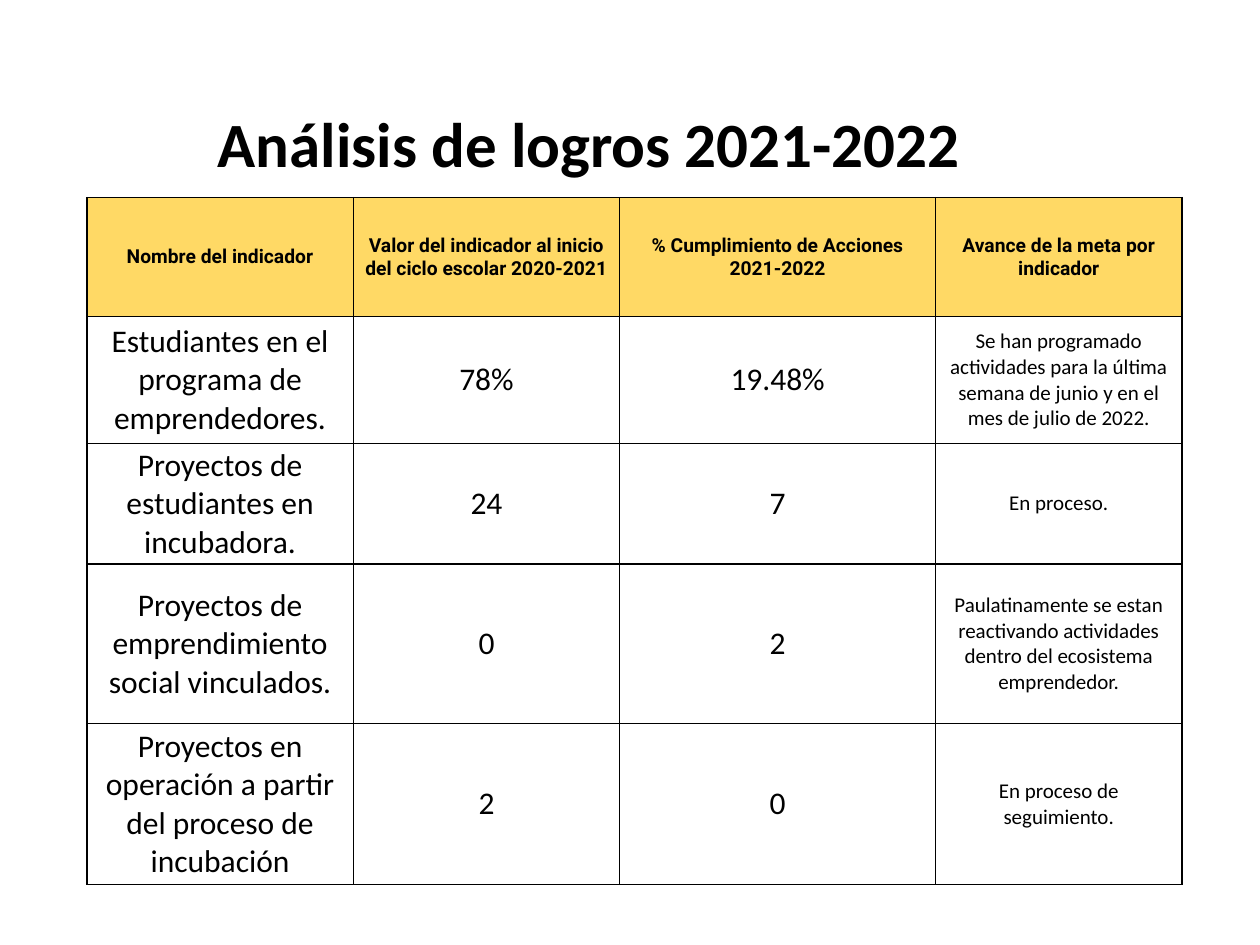
from dataclasses import dataclass

from lxml import etree
from pptx import Presentation
from pptx.dml.color import RGBColor
from pptx.enum.text import MSO_ANCHOR, MSO_AUTO_SIZE, PP_ALIGN
from pptx.oxml.ns import qn
from pptx.util import Pt

CENTER = PP_ALIGN.CENTER
MIDDLE = MSO_ANCHOR.MIDDLE
NO_AUTOFIT = MSO_AUTO_SIZE.NONE
TITLE_ONLY = 5


@dataclass(frozen=True)
class Theme:
    ink: str = "000000"
    paper: str = "FFFFFF"
    header_fill: str = "FFD965"
    body_font: str = "Calibri"
    header_font: str = "Roboto"
    title_size: int = 36
    header_size: int = 11
    value_size: int = 18
    progress_size: int = 12
    border: int = 1


THEME = Theme()

TITLE = "Análisis de logros 2021-2022"
# Each cell is a list of paragraphs.
HEADINGS = [
    ["Nombre del indicador"],
    ["Valor del indicador al inicio del ciclo escolar 2020-2021"],
    ["% Cumplimiento de Acciones", "2021-2022"],
    ["Avance de la meta por indicador"],
]
INDICATORS = [
    ("Estudiantes en el programa de emprendedores.", "78%", "19.48%",
     "Se han programado actividades para la última semana de junio y en el mes de julio de 2022."),
    ("Proyectos de estudiantes en incubadora.", "24", "7", "En proceso."),
    ("Proyectos de emprendimiento social vinculados.", "0", "2",
     "Paulatinamente se estan reactivando actividades dentro del ecosistema emprendedor."),
    ("Proyectos en operación a partir del proceso de incubación", "2", "0",
     "En proceso de seguimiento."),
]

LEFT = 49.7
TITLE_TOP, TITLE_WIDTH, TITLE_HEIGHT = 64.8, 573.8, 38.2
TABLE_TOP = 113
COLUMN_WIDTHS = [152.2, 152.2, 180.6, 140.7]
ROW_HEIGHTS = [67.9, 72.6, 68.9, 91.2, 92]
CELL_MARGIN = 5


def write(text_frame, paragraphs, font, size, bold=False):
    for index, text in enumerate(paragraphs):
        paragraph = text_frame.paragraphs[0] if index == 0 else text_frame.add_paragraph()
        paragraph.alignment = CENTER
        run = paragraph.add_run()
        run.text = text
        run.font.name = font
        run.font.size = Pt(size)
        run.font.bold = bold
        run.font.color.rgb = RGBColor.from_string(THEME.ink)


def add_borders(cell):
    properties = cell._tc.get_or_add_tcPr()
    for side in ("lnL", "lnR", "lnT", "lnB"):
        line = etree.SubElement(properties, qn(f"a:{side}"), w=str(Pt(THEME.border)))
        fill = etree.SubElement(line, qn("a:solidFill"))
        etree.SubElement(fill, qn("a:srgbClr"), val=THEME.ink)


def format_cell(cell, fill):
    add_borders(cell)  # the schema puts border lines before the fill
    cell.fill.solid()
    cell.fill.fore_color.rgb = RGBColor.from_string(fill)
    cell.vertical_anchor = MIDDLE
    cell.margin_left = cell.margin_right = Pt(CELL_MARGIN)
    cell.margin_top = cell.margin_bottom = 0


def add_title(slide):
    title = slide.shapes.title
    title.left, title.top = Pt(LEFT), Pt(TITLE_TOP)
    title.width, title.height = Pt(TITLE_WIDTH), Pt(TITLE_HEIGHT)
    title.fill.solid()
    title.fill.fore_color.rgb = RGBColor.from_string(THEME.paper)
    frame = title.text_frame
    frame.word_wrap = True
    frame.auto_size = NO_AUTOFIT
    frame.vertical_anchor = MIDDLE
    write(frame, [TITLE], THEME.body_font, THEME.title_size, bold=True)
    frame.paragraphs[0].line_spacing = 0.9


def add_indicator_table(slide):
    table = slide.shapes.add_table(
        len(ROW_HEIGHTS), len(COLUMN_WIDTHS), Pt(LEFT), Pt(TABLE_TOP),
        Pt(sum(COLUMN_WIDTHS)), Pt(sum(ROW_HEIGHTS))).table
    for column, width in zip(table.columns, COLUMN_WIDTHS):
        column.width = Pt(width)
    for row, height in zip(table.rows, ROW_HEIGHTS):
        row.height = Pt(height)

    for column, heading in enumerate(HEADINGS):
        cell = table.cell(0, column)
        format_cell(cell, THEME.header_fill)
        write(cell.text_frame, heading, THEME.header_font, THEME.header_size, bold=True)

    progress_column = len(HEADINGS) - 1
    for row, indicator in enumerate(INDICATORS, start=1):
        for column, text in enumerate(indicator):
            cell = table.cell(row, column)
            format_cell(cell, THEME.paper)
            size = THEME.progress_size if column == progress_column else THEME.value_size
            write(cell.text_frame, [text], THEME.body_font, size)


def main():
    presentation = Presentation()
    presentation.slide_width, presentation.slide_height = Pt(720), Pt(540)
    slide = presentation.slides.add_slide(presentation.slide_layouts[TITLE_ONLY])
    add_title(slide)
    add_indicator_table(slide)
    presentation.save("out.pptx")


if __name__ == "__main__":
    main()
